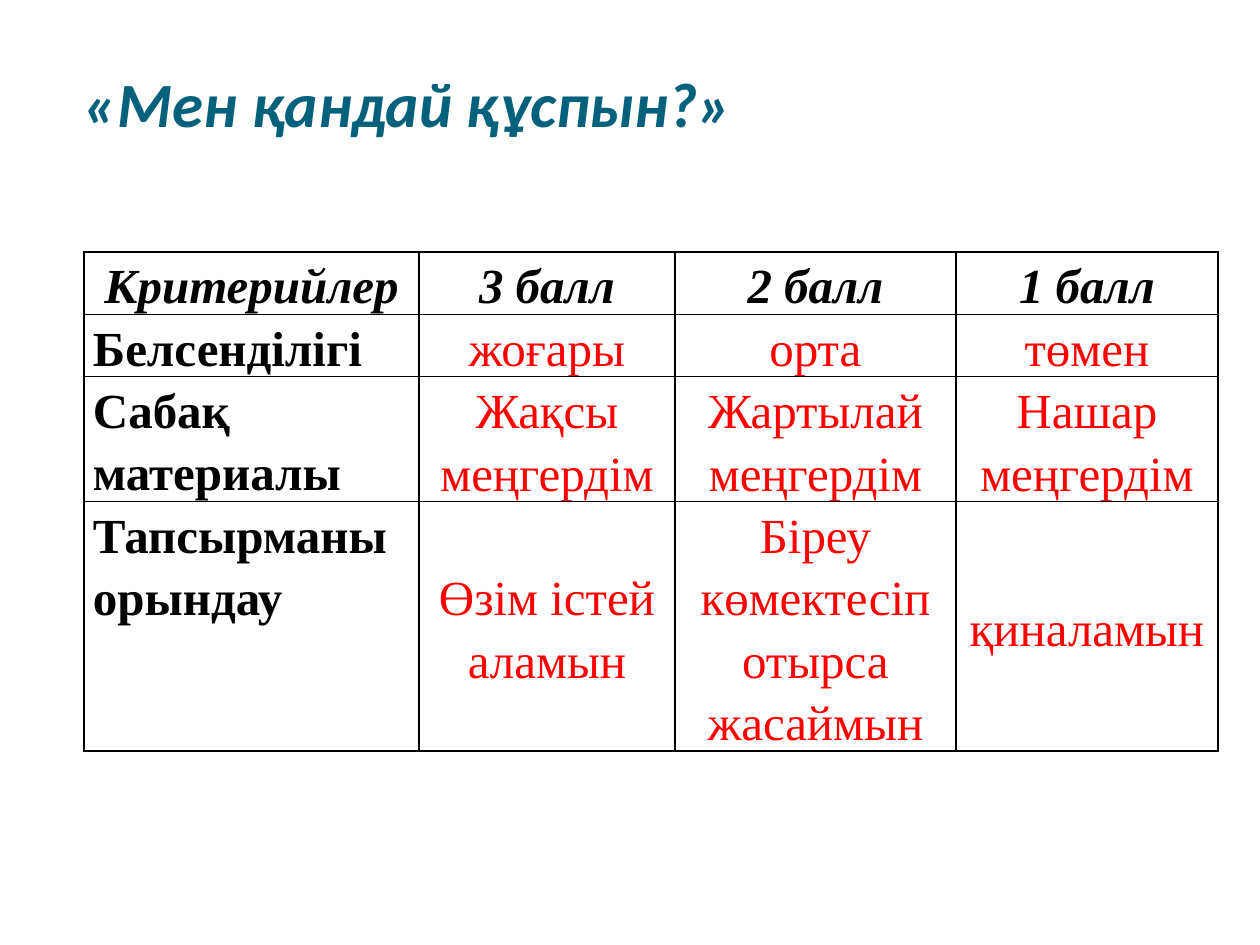
"""Build the self-assessment slide with its criteria table."""
from lxml import etree
from pptx import Presentation, util as u
from pptx.dml.color import RGBColor
from pptx.enum import shapes, text
from pptx.oxml import ns

THEME = dict(
    title="04617B", label="000000", answer="FF0000", paper="FFFFFF", border="000000",
    title_font="Calibri", table_font="Times New Roman", title_size=36, table_size=28,
)
SCALE = 914400 / 126


def px(n):
    return u.Emu(round(n * SCALE))


def write(tf, content, *, font, size, color, bold=False, italic=False,
          align=text.PP_ALIGN.LEFT, spacing=1.0):
    tf.word_wrap = True
    p = tf.paragraphs[0]
    p.alignment, p.line_spacing = align, spacing
    r = p.add_run()
    r.text = content
    f = r.font
    f.name, f.size, f.bold, f.italic = font, u.Pt(size), bold, italic
    f.color.rgb = RGBColor.from_string(color)


prs = Presentation()
prs.slide_width, prs.slide_height = px(1260), px(945)
s = prs.slides.add_slide(prs.slide_layouts[6])

sp = s.shapes.add_shape(shapes.MSO_SHAPE.RECTANGLE, px(84), px(42), px(1092), px(98))
sp.shadow.inherit = False
sp.fill.solid()
sp.fill.fore_color.rgb = RGBColor.from_string(THEME["paper"])
sp.line.fill.background()
tf = sp.text_frame
tf.margin_left = tf.margin_right = tf.margin_bottom = 0
tf.margin_top = px(6)
tf.vertical_anchor = text.MSO_ANCHOR.BOTTOM
write(tf, "«Мен қандай құспын?»", font=THEME["title_font"], size=THEME["title_size"],
      color=THEME["title"], bold=True, italic=True)

rows = [
    ["Критерийлер", "3 балл", "2 балл", "1 балл"],
    ["Белсенділігі", "жоғары", "орта", "төмен"],
    ["Сабақ материалы", "Жақсы меңгердім", "Жартылай меңгердім", "Нашар меңгердім"],
    ["Тапсырманы орындау", "Өзім істей аламын", "Біреу көмектесіп отырса жасаймын",
     "қиналамын"],
]
widths = [335, 256, 281, 262]
heights = [62, 62, 125, 249]
table = s.shapes.add_table(len(rows), len(widths), px(84), px(252),
                           px(sum(widths)), px(sum(heights))).table
table.first_row = table.horz_banding = False
for column, width in zip(table.columns, widths):
    column.width = px(width)
for row, height in zip(table.rows, heights):
    row.height = px(height)

for i, row in enumerate(rows):
    for j, content in enumerate(row):
        cell = table.cell(i, j)
        header, label = i == 0, i > 0 and j == 0
        cell.margin_left = cell.margin_right = px(9)
        cell.margin_top = cell.margin_bottom = 0
        cell.vertical_anchor = text.MSO_ANCHOR.TOP if label else text.MSO_ANCHOR.MIDDLE
        if header:
            cell.fill.solid()
            cell.fill.fore_color.rgb = RGBColor.from_string(THEME["paper"])
        else:
            cell.fill.background()
        write(cell.text_frame, content, font=THEME["table_font"], size=THEME["table_size"],
              color=THEME["label"] if header or label else THEME["answer"],
              bold=header or label, italic=header, spacing=1.15,
              align=text.PP_ALIGN.LEFT if label else text.PP_ALIGN.CENTER)
        props = cell._tc.get_or_add_tcPr()
        for k, side in enumerate(("lnL", "lnR", "lnT", "lnB")):
            ln = etree.Element(ns.qn(f"a:{side}"), w=str(u.Pt(1)))
            fill = etree.SubElement(ln, ns.qn("a:solidFill"))
            etree.SubElement(fill, ns.qn("a:srgbClr"), val=THEME["border"])
            props.insert(k, ln)

prs.save("out.pptx")
